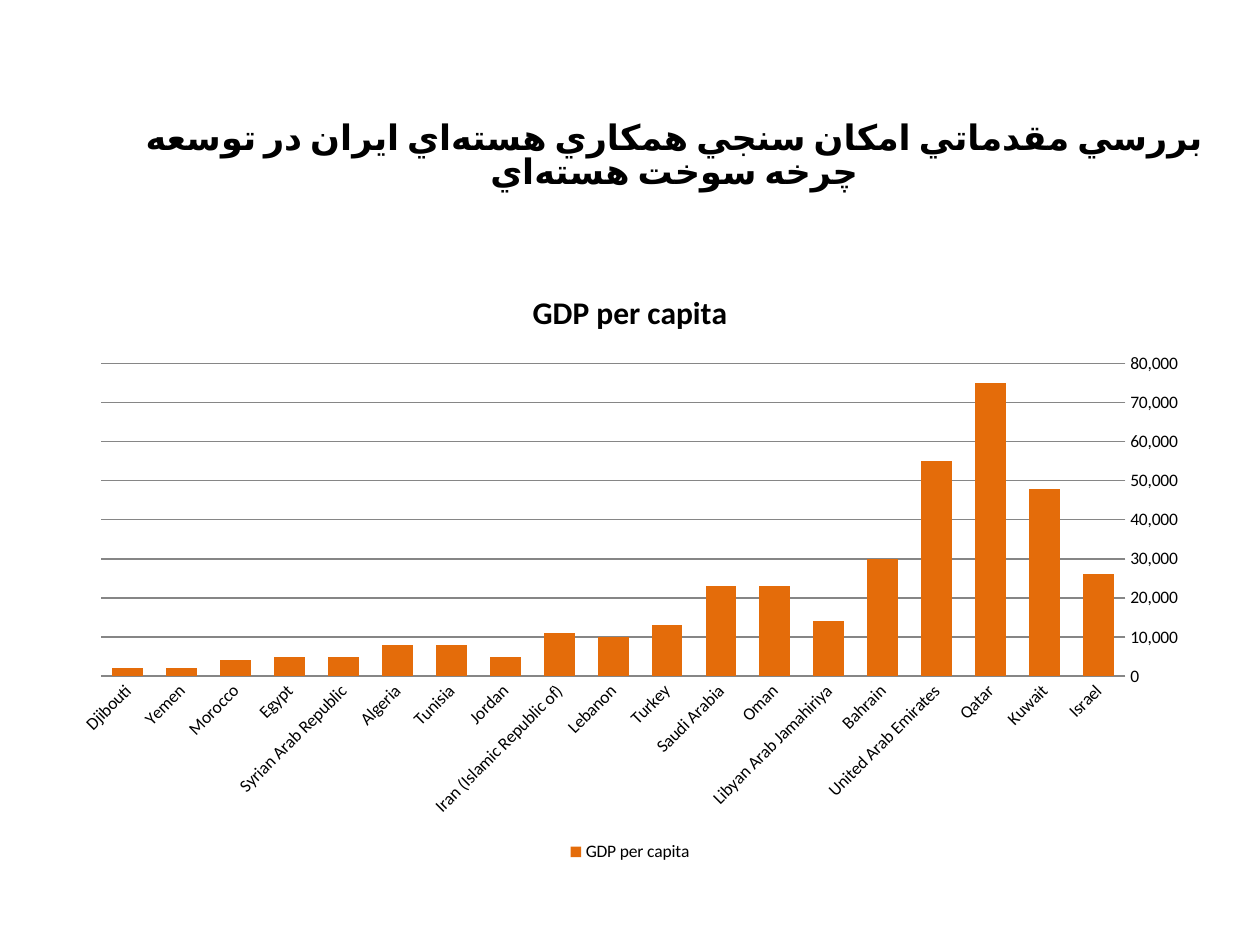
"""Build a slide with a right-to-left title and a column chart of GDP per capita."""
from lxml.etree import SubElement
from pptx import Presentation
from pptx.chart.data import CategoryChartData
from pptx.dml.color import RGBColor
from pptx.enum.chart import XL_CHART_TYPE as CT, XL_LEGEND_POSITION as LP, XL_TICK_MARK as TM
from pptx.enum.text import MSO_ANCHOR, MSO_AUTO_SIZE, PP_ALIGN
from pptx.oxml.ns import qn
from pptx.util import Inches, Pt

FONT = "Calibri"
ZERO_WIDTH_NON_JOINER = chr(8204)
NUCLEAR = ZERO_WIDTH_NON_JOINER.join(["هسته", "اي"])
COLORS = {"text": "000000", "bar": "E46C0A", "grid": "868686"}
GDP = {
    "Israel": 26000, "Kuwait": 48000, "Qatar": 75000, "United Arab Emirates": 55000,
    "Bahrain": 30000, "Libyan Arab Jamahiriya": 14000, "Oman": 23000,
    "Saudi Arabia": 23000, "Turkey": 13000, "Lebanon": 10000,
    "Iran (Islamic Republic of)": 11000, "Jordan": 5000, "Tunisia": 8000,
    "Algeria": 8000, "Syrian Arab Republic": 5000, "Egypt": 5000,
    "Morocco": 4000, "Yemen": 2000, "Djibouti": 2000,
}


def rgb(name):
    return RGBColor.from_string(COLORS[name])


def write(tf, text, size=18, bold=True, color="text", rtl=False, spacing=None):
    p = tf.paragraphs[0]
    p.alignment = PP_ALIGN.CENTER
    if spacing:
        p.line_spacing = spacing
    r = p.add_run()
    r.text = text
    r.font.name, r.font.size, r.font.bold = FONT, Pt(size), bold
    r.font.color.rgb = rgb(color)
    if rtl:
        p._p.get_or_add_pPr().set("rtl", "1")
        rPr = r._r.get_or_add_rPr()
        rPr.set("lang", "fa-IR")
        SubElement(rPr, qn("a:cs")).set("typeface", FONT)


prs = Presentation()
prs.slide_width, prs.slide_height = Inches(10), Inches(7.5)
W, H = prs.slide_width, prs.slide_height
s = prs.slides.add_slide(prs.slide_layouts[5])

title = s.shapes.title
title.left, title.top = int(W * 0.07), int(H * 0.13)
title.width, title.height = int(W * 0.93), Inches(0.55)
tf = title.text_frame
tf.word_wrap, tf.auto_size = True, MSO_AUTO_SIZE.NONE
tf.vertical_anchor = MSO_ANCHOR.MIDDLE
write(tf, f"بررسي مقدماتي امکان سنجي همکاري {NUCLEAR} ايران در توسعه چرخه سوخت {NUCLEAR}",
      size=20, rtl=True, spacing=0.8)

data = CategoryChartData(number_format="#,##0")
data.categories = list(GDP)
data.add_series("GDP per capita", list(GDP.values()))
margin = Inches(0.47)
chart = s.shapes.add_chart(CT.COLUMN_CLUSTERED, margin, Inches(2.11),
                           W - 2 * margin, Inches(4.77), data).chart
chart.font.name, chart.font.size = FONT, Pt(10)
chart.font.color.rgb = rgb("text")
chart.has_title = True
write(chart.chart_title.text_frame, "GDP per capita")
chart.chart_title.include_in_layout = False
chart.has_legend = True
chart.legend.position, chart.legend.include_in_layout = LP.BOTTOM, False

plot = chart.plots[0]
plot.gap_width, plot.vary_by_categories = 75, False
bars = plot.series[0]
bars.format.fill.solid()
bars.format.fill.fore_color.rgb = rgb("bar")

cat, val = chart.category_axis, chart.value_axis
for axis in (cat, val):
    axis.major_tick_mark = axis.minor_tick_mark = TM.NONE
    axis.tick_labels.font.size = Pt(10)
cat.reverse_order = True
cat.format.line.color.rgb = rgb("grid")
cat._element.find(qn("c:txPr")).find(qn("a:bodyPr")).set("rot", "-2700000")
val.minimum_scale, val.maximum_scale, val.major_unit = 0, 80000, 10000
val.has_major_gridlines = True
val.major_gridlines.format.line.color.rgb = rgb("grid")
val.major_gridlines.format.line.width = Pt(0.75)
val.format.line.fill.background()
val.tick_labels.number_format = "#,##0"
val.tick_labels.number_format_is_linked = False

prs.save("out.pptx")
